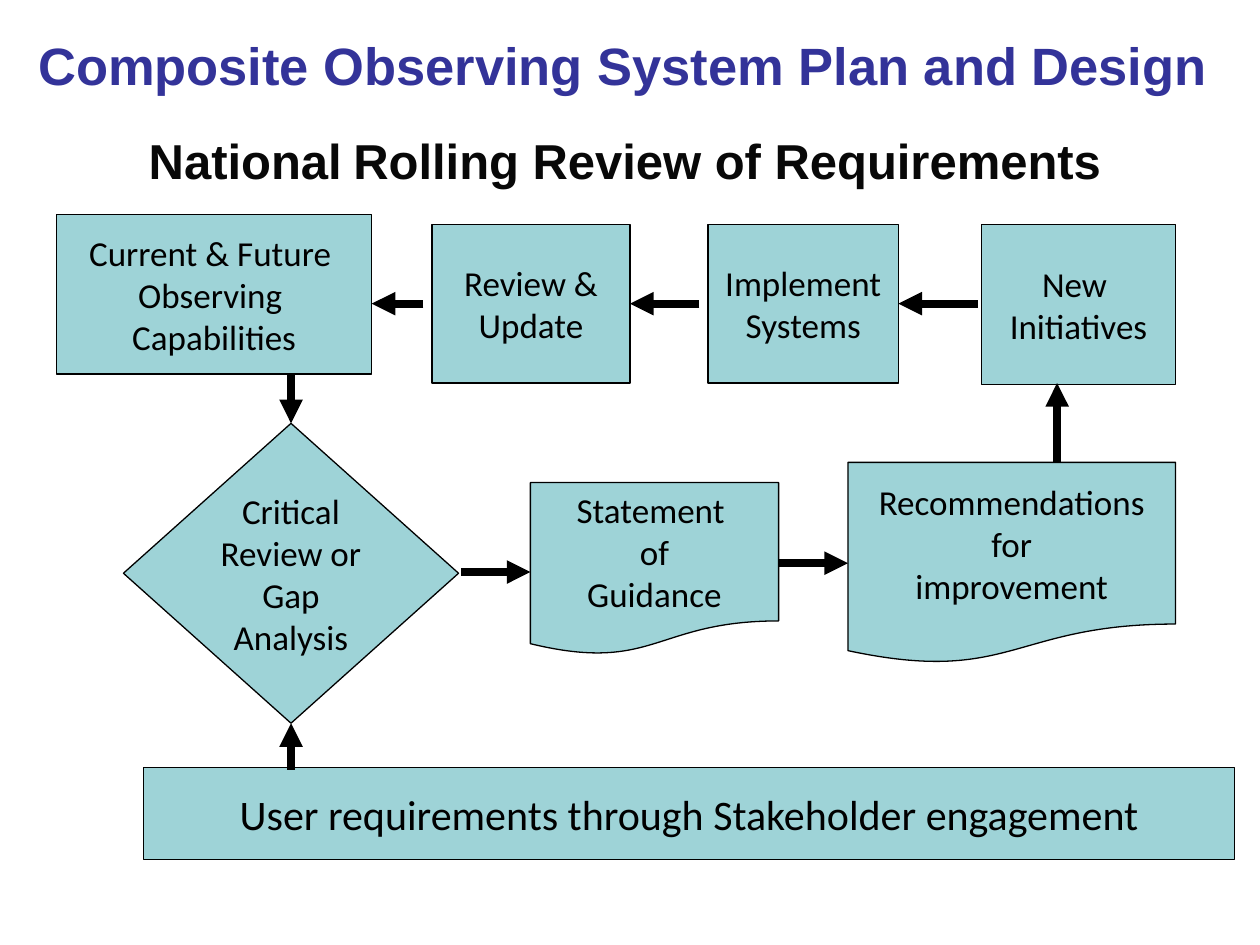
from lxml import etree
from pptx import Presentation
from pptx.dml.color import RGBColor
from pptx.enum import shapes, text
from pptx.oxml import ns
from pptx.util import Inches, Pt

COLORS = {"fill": "9ED3D7", "ink": "000000", "title": "333399", "heading": "080808"}
RECT = shapes.MSO_SHAPE.RECTANGLE
DIAMOND = shapes.MSO_SHAPE.FLOWCHART_DECISION
DOCUMENT = shapes.MSO_SHAPE.FLOWCHART_DOCUMENT
TOP, LEFT, BOTTOM, RIGHT = range(4)

# name: (preset, (left, top, width, height), size, lines)
STEPS = {
    "capabilities": (RECT, (0.45, 1.7, 2.5, 1.27), 20,
                     ["Current & Future ", "Observing ", "Capabilities"]),
    "review": (RECT, (3.43, 1.78, 1.57, 1.26), 20, ["Review &", "Update"]),
    "implement": (RECT, (5.62, 1.78, 1.51, 1.26), 20, ["Implement", "Systems"]),
    "initiatives": (RECT, (7.79, 1.78, 1.54, 1.27), 20, ["New ", "Initiatives"]),
    "gap": (DIAMOND, (0.98, 3.36, 2.66, 2.38), 20,
            ["Critical", "Review or", "Gap", "Analysis"]),
    "guidance": (DOCUMENT, (4.21, 3.83, 1.97, 1.37), 20,
                 ["Statement ", "of", "Guidance"]),
    "recommendations": (DOCUMENT, (6.73, 3.67, 2.6, 1.6), 20,
                        ["Recommendations", "for", "improvement"]),
    "users": (RECT, (1.14, 6.09, 8.66, 0.73), 24,
              ["User requirements through Stakeholder engagement"]),
}

# (start, end, step and side joined at the end, if any)
ARROWS = [
    ((2.31, 6.11), (2.31, 5.74), ("gap", BOTTOM)),
    ((2.31, 2.97), (2.31, 3.36), ("gap", TOP)),
    ((3.66, 4.54), (4.21, 4.54), None),
    ((6.18, 4.47), (6.73, 4.47), ("recommendations", LEFT)),
    ((8.39, 3.67), (8.39, 3.04), None),
    ((7.76, 2.41), (7.13, 2.41), ("implement", RIGHT)),
    ((5.55, 2.41), (5, 2.41), ("review", RIGHT)),
    ((3.36, 2.41), (2.95, 2.41), None),
]

# (box, wrap, runs as (text, size, bold, color))
HEADINGS = [
    ((0.43, 0.99, 9.06, 0.57), True,
     [("National", 28, True, "heading"), (" ", 24, False, "ink"),
      ("Rolling Review of Requirements", 28, True, "heading")]),
    ((0.2, 0.21, 9.49, 0.6), False,
     [("Composite Observing System Plan and Design", 30, True, "title")]),
]


def color(name):
    return RGBColor.from_string(COLORS[name])


def style_font(font, name, size, ink, bold=False):
    font.name, font.size, font.bold = name, Pt(size), bold
    font.color.rgb = color(ink)


def add_step(slide, preset, box, size, lines):
    shape = slide.shapes.add_shape(preset, *map(Inches, box))
    shape.shadow.inherit = False
    shape.fill.solid()
    shape.fill.fore_color.rgb = color("fill")
    shape.line.color.rgb = color("ink")
    shape.line.width = Pt(0.75)
    frame = shape.text_frame
    frame.text = "\n".join(lines)
    frame.word_wrap = False
    frame.vertical_anchor = text.MSO_ANCHOR.MIDDLE
    for paragraph in frame.paragraphs:
        paragraph.alignment = text.PP_ALIGN.CENTER
        for run in paragraph.runs:
            style_font(run.font, "Calibri", size, "ink")
    return shape


def add_arrow(slide, start, end):
    arrow = slide.shapes.add_connector(
        shapes.MSO_CONNECTOR.STRAIGHT, *map(Inches, start + end))
    arrow.line.color.rgb = color("ink")
    arrow.line.width = Pt(4.5)
    line = arrow.line._get_or_add_ln()
    etree.SubElement(line, ns.qn("a:tailEnd"), type="triangle")
    etree.SubElement(arrow._element.spPr, ns.qn("a:effectLst"))
    return arrow


def add_heading(slide, box, wrap, runs):
    frame = slide.shapes.add_textbox(*map(Inches, box)).text_frame
    frame.word_wrap = wrap
    frame.auto_size = text.MSO_AUTO_SIZE.SHAPE_TO_FIT_TEXT
    paragraph = frame.paragraphs[0]
    paragraph.alignment = text.PP_ALIGN.CENTER
    for words, size, bold, ink in runs:
        run = paragraph.add_run()
        run.text = words
        style_font(run.font, "Arial", size, ink, bold)


def main():
    presentation = Presentation()
    presentation.slide_width, presentation.slide_height = Inches(10), Inches(7.5)
    slide = presentation.slides.add_slide(presentation.slide_layouts[6])
    steps = {name: add_step(slide, *step) for name, step in STEPS.items()}
    for start, end, joint in ARROWS:
        arrow = add_arrow(slide, start, end)
        if joint:
            name, side = joint
            arrow.end_connect(steps[name], side)
    for heading in HEADINGS:
        add_heading(slide, *heading)
    presentation.save("out.pptx")


if __name__ == "__main__":
    main()
